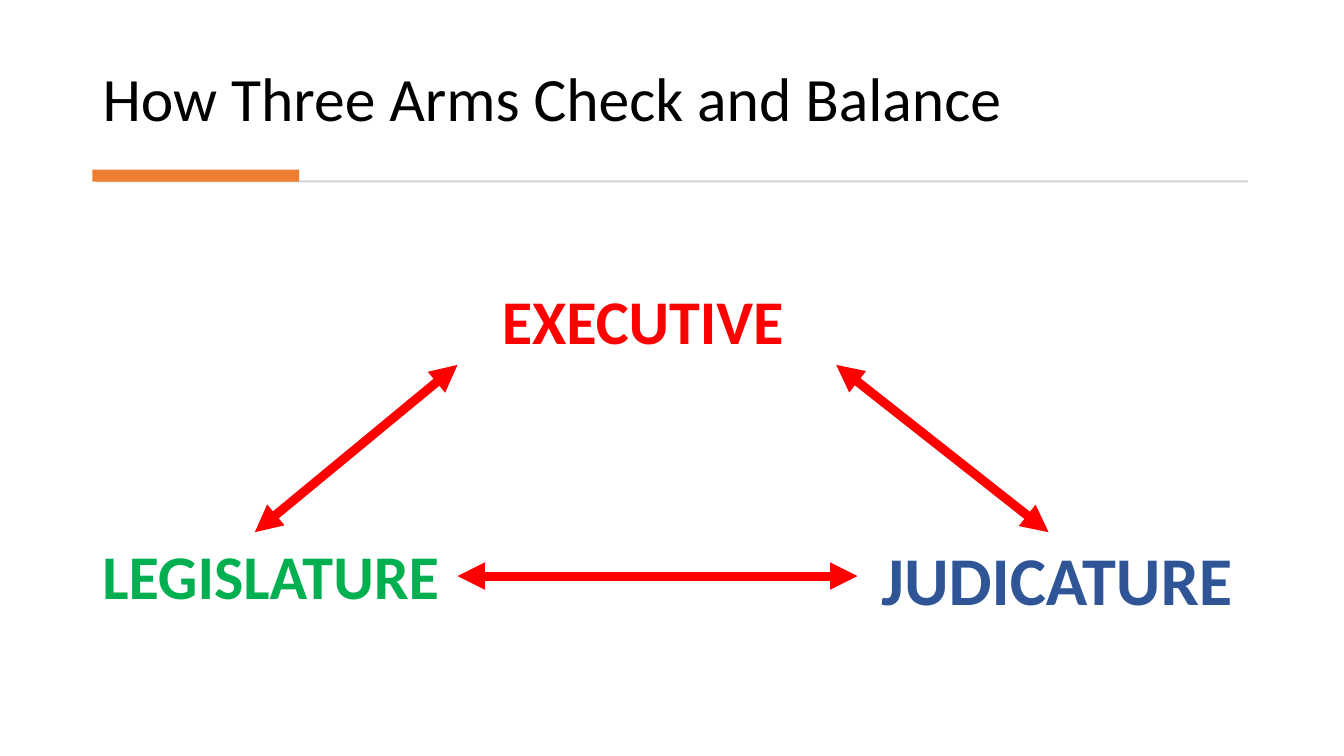
import dataclasses

import lxml.etree
import pptx
import pptx.dml.color
import pptx.enum.shapes
import pptx.enum.text
import pptx.oxml.ns
import pptx.util

WIDTH, HEIGHT = pptx.util.Inches(13.33), pptx.util.Inches(7.5)
FONT = "Calibri"
RED, GREEN, BLUE = "FF0000", "00B050", "2F5597"
ORANGE, GREY, BLACK = "ED7D31", "D5D5D5", "000000"
LEFT, ARMS_TOP, LOWER_TOP, ARROW_TOP = 6.88, 36.72, 70.4, 48.27
LOWER_MID = 76.2


@dataclasses.dataclass(frozen=True)
class Box:
    """A rectangle in percent of the slide's width and height."""
    left: float
    top: float
    width: float
    height: float

    def emu(self) -> tuple:
        """Return the rectangle as lengths."""
        return x(self.left), y(self.top), x(self.width), y(self.height)


@dataclasses.dataclass(frozen=True)
class Arm:
    """One arm of government."""
    name: str
    box: Box
    size: float
    color: str


@dataclasses.dataclass(frozen=True)
class Arrow:
    """A two-headed arrow, optionally joined to the right of an arm."""
    start: tuple
    end: tuple
    joined: str = ""


@dataclasses.dataclass(frozen=True)
class Bar:
    """A filled bar under the title."""
    box: Box
    color: str


TITLE_BOX = Box(LEFT, 3.73, 86.17, 14.8)
BARS = (
    Bar(Box(7.13, 23.87, 85.7, 0.27), GREY),
    Bar(Box(LEFT, 22.43, 15.38, 1.6), ORANGE),
)
ARMS = (
    Arm("EXECUTIVE", Box(36.61, ARMS_TOP, 23.03, 11.6), 44.4, RED),
    Arm("LEGISLATURE", Box(LEFT, LOWER_TOP, 27.16, 11.6), 44.4, GREEN),
    Arm("JUDICATURE", Box(64.84, LOWER_TOP, 28.28, 12.53), 48.8, BLUE),
)
ARROWS = (
    Arrow((34.04, ARROW_TOP), (18.96, LOWER_TOP)),
    Arrow((62.22, ARROW_TOP), (78.02, LOWER_TOP)),
    Arrow((34.04, LOWER_MID), (63.8, LOWER_MID), "LEGISLATURE"),
)


def x(share: float) -> int:
    """Turn a percentage of the slide's width into a length."""
    return round(WIDTH * share / 100)


def y(share: float) -> int:
    """Turn a percentage of the slide's height into a length."""
    return round(HEIGHT * share / 100)


def paint(target, color: str) -> None:
    """Set a font, fill or line colour from a hex string."""
    rgb = pptx.dml.color.RGBColor.from_string(color)
    if hasattr(target, "solid"):
        target.solid()
        target.fore_color.rgb = rgb
    else:
        target.color.rgb = rgb


def style(p, size: float, color: str, bold: bool) -> None:
    """Format every run of a paragraph."""
    for r in p.runs:
        r.font.name = FONT
        r.font.size = pptx.util.Pt(size)
        r.font.bold = bold
        paint(r.font, color)


def add_title(s, text: str) -> None:
    """Place the slide's title."""
    sp = s.shapes.title
    sp.left, sp.top, sp.width, sp.height = TITLE_BOX.emu()
    tf = sp.text_frame
    tf.text = text
    tf.word_wrap = True
    tf.auto_size = pptx.enum.text.MSO_AUTO_SIZE.NONE
    tf.vertical_anchor = pptx.enum.text.MSO_ANCHOR.BOTTOM
    p = tf.paragraphs[0]
    p.alignment = pptx.enum.text.PP_ALIGN.LEFT
    p.line_spacing = 0.9
    style(p, 44, BLACK, False)


def add_bar(s, bar: Bar) -> None:
    """Draw a bar without outline."""
    sp = s.shapes.add_shape(pptx.enum.shapes.MSO_SHAPE.RECTANGLE, *bar.box.emu())
    sp.shadow.inherit = False
    paint(sp.fill, bar.color)
    sp.line.fill.background()


def add_arm(s, arm: Arm):
    """Write an arm's name and return its text box."""
    sp = s.shapes.add_textbox(*arm.box.emu())
    tf = sp.text_frame
    tf.text = arm.name
    tf.word_wrap = False
    tf.auto_size = pptx.enum.text.MSO_AUTO_SIZE.SHAPE_TO_FIT_TEXT
    p = tf.paragraphs[0]
    p.space_after = pptx.util.Pt(6)
    style(p, arm.size, arm.color, True)
    return sp


def add_arrow(s, arrow: Arrow, boxes: dict) -> None:
    """Draw a red arrow with a head at both ends."""
    (x1, y1), (x2, y2) = arrow.start, arrow.end
    sp = s.shapes.add_connector(
        pptx.enum.shapes.MSO_CONNECTOR.STRAIGHT, x(x1), y(y1), x(x2), y(y2))
    if arrow.joined:
        sp.begin_connect(boxes[arrow.joined], 3)
    sp.line.width = pptx.util.Pt(6.5)
    paint(sp.line, RED)
    ln = sp.line._get_or_add_ln()
    for tag in ("a:headEnd", "a:tailEnd"):
        lxml.etree.SubElement(ln, pptx.oxml.ns.qn(tag), type="triangle")
    lxml.etree.SubElement(sp._element.spPr, pptx.oxml.ns.qn("a:effectLst"))


def main() -> None:
    """Build and save the slide."""
    prs = pptx.Presentation()
    prs.slide_width, prs.slide_height = WIDTH, HEIGHT
    s = prs.slides.add_slide(prs.slide_layouts.get_by_name("Title Only"))
    add_title(s, "How Three Arms Check and Balance")
    for bar in BARS:
        add_bar(s, bar)
    boxes = {arm.name: add_arm(s, arm) for arm in ARMS}
    for arrow in ARROWS:
        add_arrow(s, arrow, boxes)
    prs.save("out.pptx")


if __name__ == "__main__":
    main()
